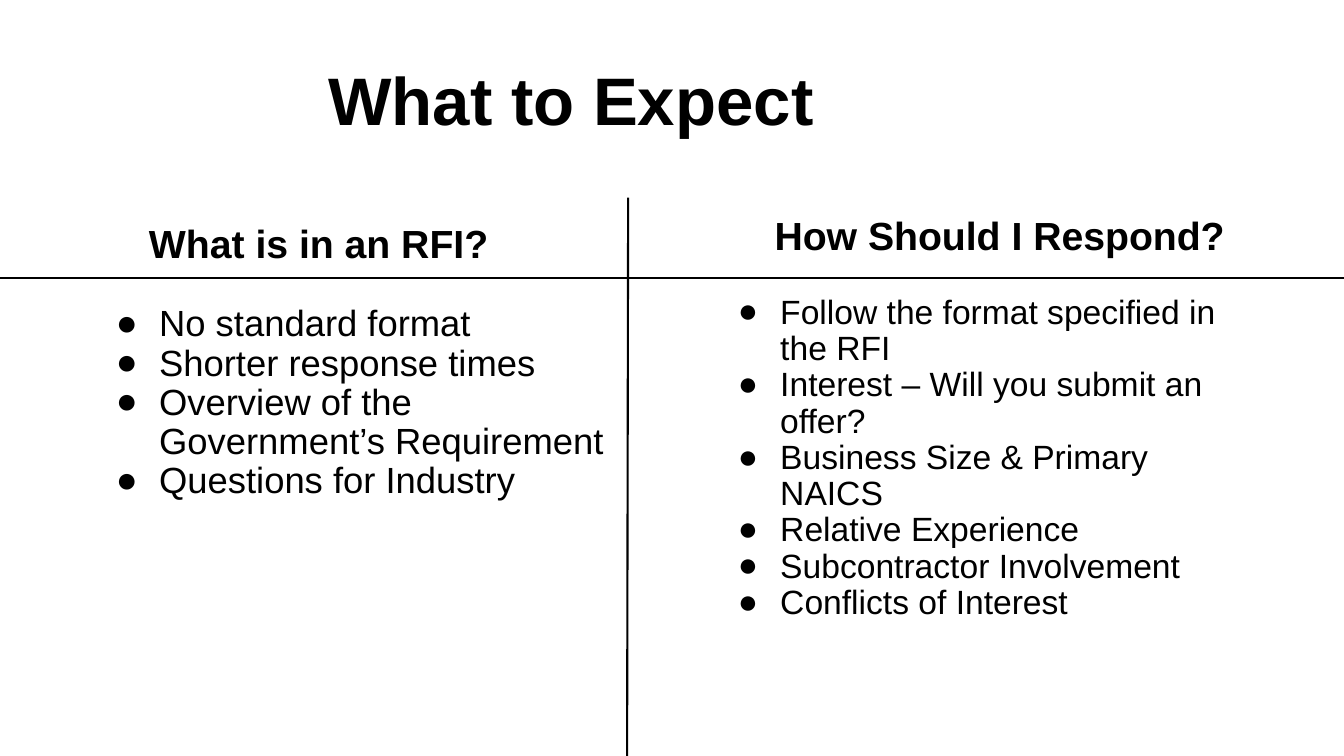
from lxml import etree
from pptx import Presentation
from pptx.dml.color import RGBColor
from pptx.enum.shapes import MSO_CONNECTOR
from pptx.enum.text import MSO_ANCHOR, MSO_AUTO_SIZE, PP_ALIGN
from pptx.oxml.ns import qn
from pptx.util import Inches, Pt

BLACK = RGBColor(0, 0, 0)
FONT = "Arial"
CENTER = PP_ALIGN.CENTER
BOTTOM = MSO_ANCHOR.BOTTOM
NO_FIT = MSO_AUTO_SIZE.NONE
STRAIGHT = MSO_CONNECTOR.STRAIGHT


def style(para, size, bold=False):
    for run in para.runs:
        run.font.name = FONT
        run.font.size = Pt(size)
        run.font.bold = bold
        run.font.color.rgb = BLACK


def add_text(place, lines, size, hang, space, bullet=None):
    """Add a text box of hanging paragraphs: bulleted, or centred and bold."""
    box = slide.shapes.add_textbox(*[Inches(n) for n in place])
    frame = box.text_frame
    frame.word_wrap = True
    frame.text = "\n".join(lines)
    for para in frame.paragraphs:
        props = para._p.get_or_add_pPr()
        props.set("marL", str(Inches(0.5)))
        props.set("indent", str(-Inches(hang)))
        if bullet:
            color = etree.SubElement(props, qn("a:buClr"))
            etree.SubElement(color, qn("a:srgbClr"), val=str(BLACK))
            etree.SubElement(props, qn("a:buFont"), typeface=FONT)
            etree.SubElement(props, qn("a:buChar"), char=bullet)
        else:
            para.alignment = CENTER
        para.line_spacing = space
        style(para, size, bold=not bullet)


deck = Presentation()
deck.slide_width = Inches(13.33)
deck.slide_height = Inches(7.5)
slide = deck.slides.add_slide(deck.slide_layouts[5])

title = slide.shapes.title
title.left, title.top = Inches(0.23), Inches(0.47)
title.width, title.height = Inches(10.87), Inches(1.01)
frame = title.text_frame
frame.text = "What to Expect"
frame.auto_size = NO_FIT
frame.vertical_anchor = BOTTOM
frame.margin_left = frame.margin_right = Inches(0.1)
frame.margin_top = frame.margin_bottom = Inches(0.1)
frame.paragraphs[0].alignment = CENTER
style(frame.paragraphs[0], 48, bold=True)

add_text((0.64, 2.22, 4.79, 0.66), ["What is in an RFI?"], 28, 0.25, 0.8)
add_text((0.98, 2.98, 5.21, 3.5), [
    "No standard format",
    "Shorter response times",
    "Overview of the Government’s Requirement",
    "Questions for Industry",
], 26, 0.43, 0.9, "●")

add_text((7.24, 2.1, 5.1, 0.66), ["How Should I Respond?"], 28, 0.25, 0.9)
add_text((7.14, 2.88, 5.21, 4.44), [
    "Follow the format specified in the RFI",
    "Interest – Will you submit an offer?",
    "Business Size & Primary NAICS",
    "Relative Experience",
    "Subcontractor Involvement",
    "Conflicts of Interest",
], 24, 0.42, 0.9, "●")

for ends in [(0, 2.76, 13.33, 2.76), (6.23, 1.96, 6.22, 7.5)]:
    rule = slide.shapes.add_connector(STRAIGHT, *[Inches(n) for n in ends])
    rule.line.color.rgb = BLACK
    rule.line.width = Pt(1.5)
    etree.SubElement(rule._element.spPr, qn("a:effectLst"))

deck.save("out.pptx")
